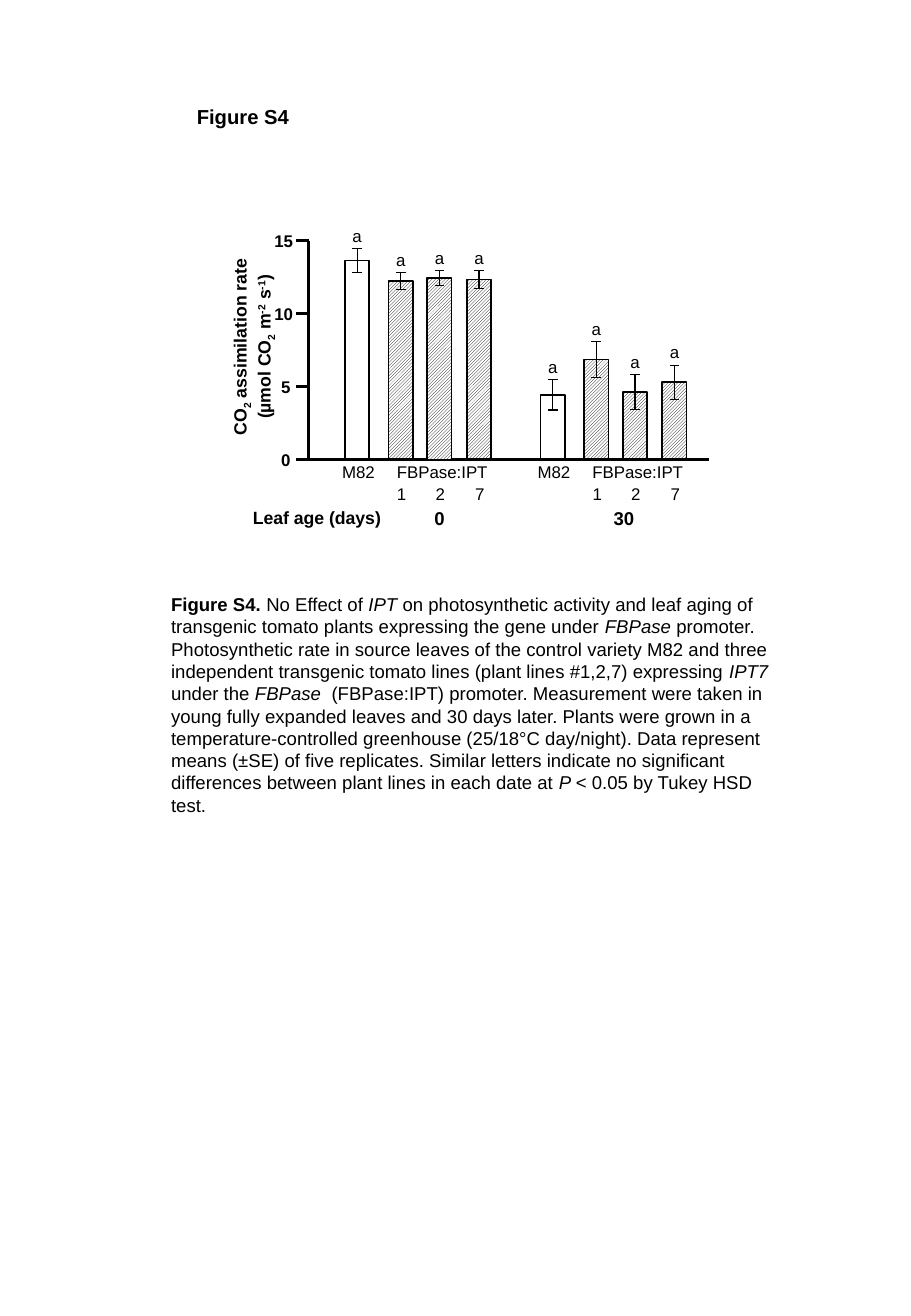
"""Build the Figure S4 slide: a bar chart of leaf photosynthesis with its caption."""
from dataclasses import dataclass, field

from lxml import etree
from pptx import Presentation
from pptx.dml.color import RGBColor
from pptx.enum.dml import MSO_PATTERN
from pptx.enum.shapes import MSO_CONNECTOR, MSO_SHAPE
from pptx.enum.text import MSO_ANCHOR, MSO_AUTO_SIZE, PP_ALIGN
from pptx.oxml.ns import qn
from pptx.util import Pt

RECTANGLE = MSO_SHAPE.RECTANGLE
STRAIGHT = MSO_CONNECTOR.STRAIGHT
HATCH = MSO_PATTERN.LIGHT_UPWARD_DIAGONAL
TOP = MSO_ANCHOR.TOP
FIT = MSO_AUTO_SIZE.SHAPE_TO_FIT_TEXT
LEFT, CENTER = PP_ALIGN.LEFT, PP_ALIGN.CENTER

BLACK, WHITE = "000000", "FFFFFF"
FONT = "Arial"
AXIS_X, AXIS_LEFT, AXIS_RIGHT = 182.9, 175.7, 420.5
BASELINE, UNIT, AXIS_MAX, TICK_STEP = 272.2, 8.64, 15, 5
BAR_WIDTH, CAP_HALF = 14.4, 2.9
BAR_OFFSETS = (0, 25.9, 48.8, 72.2)
LINE_NAMES = ("1", "2", "7")
LABEL_HEIGHT = 19.4


@dataclass
class Span:
    """A stretch of text with its own format."""
    text: str
    format: dict = field(default_factory=dict)
    baseline: int = 0


@dataclass
class Bar:
    """A mean value with its standard error."""
    mean: float
    error: float


@dataclass
class LeafAge:
    """The four bars measured at one leaf age."""
    days: str
    start: float
    days_center: float
    bars: list[Bar]


AGES = [
    LeafAge("0", 211.7, 260.6,
            [Bar(13.63, 0.83), Bar(12.25, 0.58), Bar(12.45, 0.5), Bar(12.33, 0.62)]),
    LeafAge("30", 327.6, 369.8,
            [Bar(4.43, 1.04), Bar(6.85, 1.23), Bar(4.63, 1.2), Bar(5.29, 1.17)]),
]
BOLD, ITALIC = {"bold": True}, {"italic": True}
AXIS_TITLE = [
    Span("CO"), Span("2", baseline=-25), Span(" assimilation rate (µmol CO"),
    Span("2", baseline=-25), Span(" m"), Span("-2", baseline=30),
    Span(" s"), Span("-1", baseline=30), Span(")"),
]
CAPTION = [
    [Span("Figure S4. ", BOLD), Span("No Effect of "), Span("IPT", ITALIC),
     Span(" on photosynthetic activity and leaf aging of transgenic tomato plants "
          "expressing the gene under "),
     Span("FBPase", ITALIC), Span(" promoter.")],
    [Span("Photosynthetic rate in source leaves of the control variety M82 and three "
          "independent transgenic tomato lines (plant lines #1,2,7) expressing "),
     Span("IPT7 ", ITALIC), Span("under the "), Span("FBPase  ", ITALIC),
     Span("(FBPase:IPT) promoter. Measurement were taken in young fully expanded leaves "
          "and 30 days later. Plants were grown in a temperature-controlled greenhouse "
          "(25/18°C day/night). Data represent means (±SE) of five replicates. Similar "
          "letters indicate no significant differences between plant lines in each date at "),
     Span("P ", ITALIC), Span("< 0.05 by Tukey HSD test.")],
]


def color(value: str) -> RGBColor:
    """Turn a hex string into a colour."""
    return RGBColor.from_string(value)


def level(value: float) -> float:
    """Return the height on the slide of a value on the axis."""
    return BASELINE - value * UNIT


def write(box, paragraphs: list[list[Span]], size: float, bold: bool = False,
          align=CENTER) -> None:
    """Fill a text shape with formatted paragraphs."""
    frame = box.text_frame
    frame.word_wrap = True
    frame.auto_size = FIT
    frame.vertical_anchor = TOP
    for index, spans in enumerate(paragraphs):
        para = frame.add_paragraph() if index else frame.paragraphs[0]
        para.alignment = align
        for span in spans:
            run = para.add_run()
            run.text = span.text
            values = {"name": FONT, "size": Pt(size), "bold": bold} | span.format
            for name, value in values.items():
                setattr(run.font, name, value)
            run.font.color.rgb = color(BLACK)
            if span.baseline:
                run._r.get_or_add_rPr().set("baseline", str(span.baseline * 1000))


def add_label(shapes, text: str, center: float, top: float, width: float,
              size: float = 10, bold: bool = False) -> None:
    """Add a one-line label centred on a position."""
    box = shapes.add_textbox(Pt(center - width / 2), Pt(top), Pt(width), Pt(LABEL_HEIGHT))
    write(box, [[Span(text)]], size, bold)


def add_line(shapes, x1: float, y1: float, x2: float, y2: float, width: float) -> None:
    """Add a plain black line."""
    line = shapes.add_connector(STRAIGHT, Pt(x1), Pt(y1), Pt(x2), Pt(y2))
    line.line.color.rgb = color(BLACK)
    line.line.width = Pt(width)
    etree.SubElement(line._element.spPr, qn("a:effectLst"))


def add_bar(shapes, bar: Bar, center: float, hatched: bool) -> None:
    """Add a bar with its error bar and significance letter."""
    top = level(bar.mean)
    box = shapes.add_shape(RECTANGLE, Pt(center - BAR_WIDTH / 2), Pt(top),
                           Pt(BAR_WIDTH), Pt(BASELINE - top))
    box.shadow.inherit = False
    box.line.color.rgb = color(BLACK)
    box.line.width = Pt(1)
    if hatched:
        box.fill.patterned()
        box.fill.pattern = HATCH
        box.fill.fore_color.rgb = color(BLACK)
        box.fill.back_color.rgb = color(WHITE)
    else:
        box.fill.background()
    high, low = level(bar.mean + bar.error), level(bar.mean - bar.error)
    add_line(shapes, center, high, center, low, 0.75)
    for end in (low, high):
        add_line(shapes, center - CAP_HALF, end, center + CAP_HALF, end, 0.75)
    add_label(shapes, "a", center, high - 17.2, 20.2)


def add_axes(shapes) -> None:
    """Add both axes, the ticks and the axis title."""
    add_line(shapes, AXIS_X, level(AXIS_MAX), AXIS_X, BASELINE, 1.5)
    add_line(shapes, AXIS_LEFT, BASELINE, AXIS_RIGHT, BASELINE, 1.5)
    for value in range(0, AXIS_MAX + 1, TICK_STEP):
        if value:
            add_line(shapes, AXIS_LEFT, level(value), AXIS_X, level(value), 1.5)
        center = 168.2 if value >= 10 else 169.4
        add_label(shapes, str(value), center, level(value) - 9.6, 36, bold=True)
    box = shapes.add_textbox(Pt(78.5), Pt(189.4), Pt(139.7), Pt(32.4))
    box.rotation = 270
    write(box, [AXIS_TITLE], 10.5, True)


def add_age(shapes, age: LeafAge) -> None:
    """Add the bars of one leaf age and the labels below them."""
    centers = [age.start + offset for offset in BAR_OFFSETS]
    for index, (bar, center) in enumerate(zip(age.bars, centers)):
        add_bar(shapes, bar, center, hatched=index > 0)
    add_label(shapes, "M82", age.start + 0.8, 270, 52.6)
    add_label(shapes, "FBPase:IPT", age.start + 50.4, 270, 70)
    for name, center in zip(LINE_NAMES, centers[1:]):
        add_label(shapes, name, center + 0.5, 283, 24.5)
    add_label(shapes, age.days, age.days_center, 296.6, 60.5, 11, True)


def main() -> None:
    """Build and save the deck."""
    deck = Presentation()
    deck.slide_width, deck.slide_height = Pt(540), Pt(779.76)
    slide = deck.slides.add_slide(deck.slide_layouts[5])
    title = slide.shapes.title
    title.left, title.top, title.width, title.height = Pt(57.6), Pt(58.3), Pt(172.8), Pt(21.6)
    write(title, [[Span("Figure S4")]], 12, True)
    caption = slide.shapes.add_textbox(Pt(94.3), Pt(347.8), Pt(373.7), Pt(140.4))
    write(caption, CAPTION, 11, align=LEFT)
    chart = slide.shapes.add_group_shape().shapes
    add_axes(chart)
    for age in AGES:
        add_age(chart, age)
    add_label(chart, "Leaf age (days)", 187.9, 296.6, 157, 10.5, True)
    deck.save("out.pptx")


if __name__ == "__main__":
    main()
